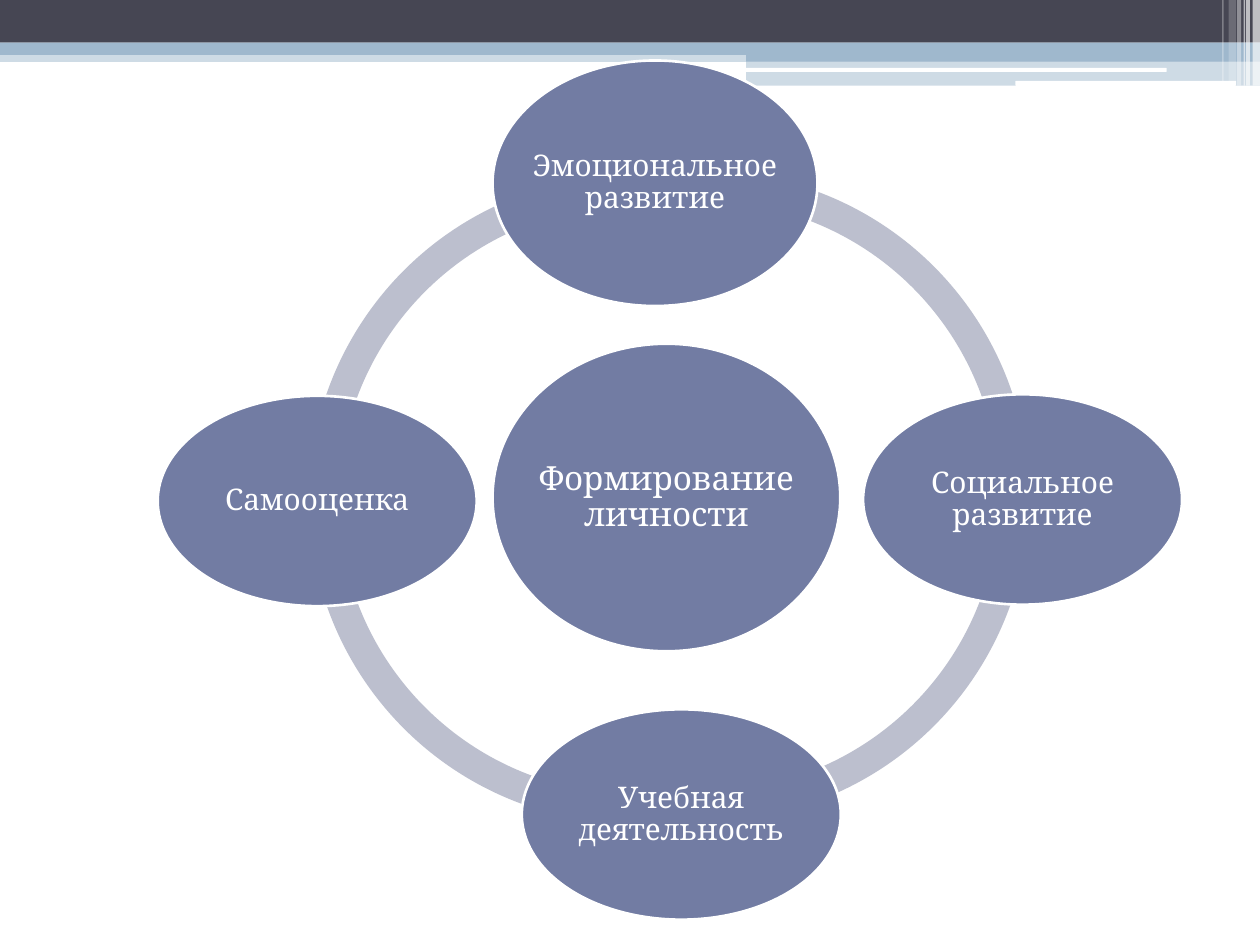
from lxml import etree
from pptx import Presentation
from pptx import util as u
from pptx.dml.color import RGBColor
from pptx.enum import shapes, text
from pptx.oxml.ns import qn

DARK = RGBColor(0x46, 0x46, 0x53)
BLUE = RGBColor(0x9F, 0xB8, 0xCD)
WHITE = RGBColor(0xFF, 0xFF, 0xFF)
NODE = RGBColor(0x72, 0x7C, 0xA3)
RING = RGBColor(0xBC, 0xBF, 0xCE)
FORM = shapes.MSO_SHAPE
WIDE = 25.4


class Deck:
    """Style and current slide, with one method per kind of element."""

    font = "Cambria"

    def __init__(self, wide, high):
        """Start a deck with one blank slide; sizes in cm."""
        self.file = Presentation()
        self.file.slide_width, self.file.slide_height = u.Cm(wide), u.Cm(high)
        self.slide = self.file.slides.add_slide(self.file.slide_layouts[6])

    def shape(self, form, box, color, alpha=100):
        """Add a flat filled shape; box is left, top, width, height in cm."""
        item = self.slide.shapes.add_shape(form, *map(u.Cm, box))
        item.shadow.inherit = False
        item.fill.solid()
        item.fill.fore_color.rgb = color
        item.line.fill.background()
        if alpha < 100:
            tone = item.fill._xPr.find(".//" + qn("a:srgbClr"))
            etree.SubElement(tone, qn("a:alpha"), val=str(alpha * 1000))
        return item

    def arc(self, left, top, size, start, end):
        """Add a ring segment between two angles in degrees."""
        item = self.shape(FORM.BLOCK_ARC, (left, top, size, size), RING)
        for i, value in enumerate((start * 0.6, end * 0.6, 0.046)):
            item.adjustments[i] = value

    def label(self, box, words, size):
        """Add centred white text over a box."""
        frame = self.slide.shapes.add_textbox(*map(u.Cm, box)).text_frame
        frame.word_wrap = True
        frame.vertical_anchor = text.MSO_ANCHOR.MIDDLE
        frame.margin_left = frame.margin_right = u.Cm(0.06)
        frame.margin_top = frame.margin_bottom = u.Cm(0.06)
        frame.text = words
        para = frame.paragraphs[0]
        para.alignment = text.PP_ALIGN.CENTER
        para.line_spacing = 0.9
        font = para.runs[0].font
        font.name, font.size = self.font, u.Pt(size)
        font.color.rgb = WHITE

    def node(self, box, words, size=17):
        """Add an outlined ellipse with its label."""
        item = self.shape(FORM.OVAL, box, NODE)
        item.line.color.rgb = WHITE
        item.line.width = u.Pt(1.5)
        self.label(box, words, size)


def header(deck):
    """Draw the bands, white bars and stripes along the top."""
    half = 15.04
    for left, top, high, color, alpha in (
        (0, 1.02, 0.23, BLUE, 50),
        (0, 0, 0.86, DARK, 100),
        (0, 0.86, 0.25, BLUE, 100),
        (half, 0.99, 0.25, BLUE, 100),
        (half, 1.22, 0.51, BLUE, 50),
    ):
        deck.shape(FORM.RECTANGLE, (left, top, WIDE - left, high), color, alpha)
    for box in ((15.01, 1.37, 8.51, 0.08), (20.47, 1.63, 4.45, 0.1)):
        deck.shape(FORM.ROUNDED_RECTANGLE, box, WHITE)
    for left, wide, high, alpha in (
        (25.25, 0.15, 1.73, 65),
        (25.12, 0.08, 1.73, 65),
        (25.07, 0.03, 1.73, 60),
        (24.94, 0.08, 1.73, 40),
        (24.77, 0.15, 1.63, 20),
        (24.64, 0.03, 1.63, 30),
    ):
        deck.shape(FORM.RECTANGLE, (left, 0, wide, high), WHITE, alpha)


def cycle(deck):
    """Draw the ring, the centre and the four nodes around it."""
    for left, top, start, end in (
        (6.22, 3.53, 179.89, 273.62),
        (6.22, 3.48, 81.66, 179.57),
        (7.62, 3.43, 0.57, 94.13),
        (7.62, 3.45, 261.14, 0.36),
    ):
        deck.arc(left, top, 13.13, start, end)
    deck.node((9.93, 6.93, 7.01, 6.2), "Формирование личности", 19)
    deck.node((9.93, 1.22, 6.55, 4.95), "Эмоциональное развитие")
    for left, top, words in (
        (17.4, 7.95, "Социальное развитие"),
        (10.52, 14.3, "Учебная деятельность"),
        (3.18, 7.98, "Самооценка"),
    ):
        deck.node((left, top, 6.43, 4.24), words)


deck = Deck(WIDE, 19.05)
header(deck)
cycle(deck)
deck.file.save("out.pptx")
